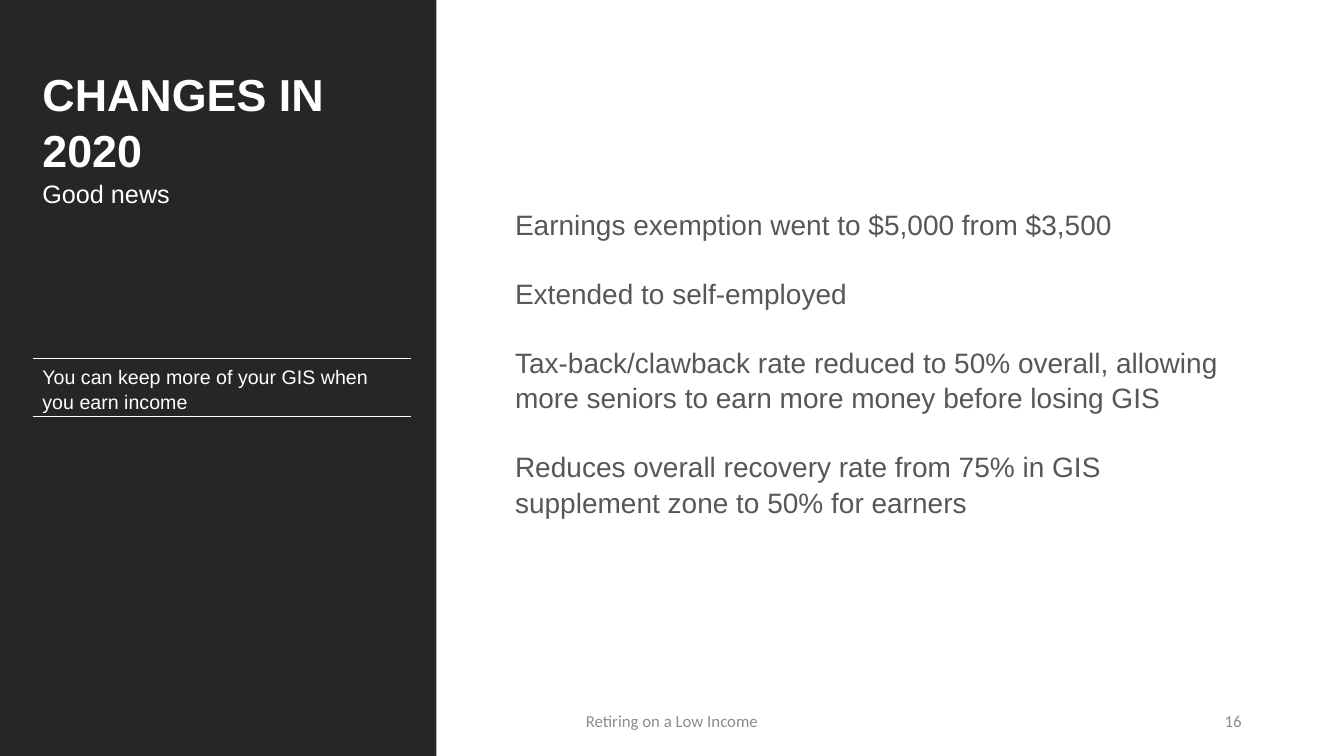
import pptx
import pptx.util
import pptx.dml.color
import pptx.enum.shapes
import pptx.enum.text
import pptx.oxml.ns
import lxml.etree

Cm, Pt = pptx.util.Cm, pptx.util.Pt
ALIGN, ANCHOR = pptx.enum.text.PP_ALIGN, pptx.enum.text.MSO_ANCHOR
COLORS = {"panel": "262626", "white": "FFFFFF", "body": "575757", "footer": "8C8C8C"}


def color(name):
    return pptx.dml.color.RGBColor.from_string(COLORS[name])


def add_text(box, paragraphs, tint, font="Arial", align=ALIGN.LEFT,
             anchor=ANCHOR.TOP, line_spacing=1.05, gap=0):
    """Add a text box; each paragraph is (text, size, bold)."""
    frame = slide.shapes.add_textbox(*(Cm(length) for length in box)).text_frame
    frame.word_wrap = True
    frame.vertical_anchor = anchor
    for index, (text, size, bold) in enumerate(paragraphs):
        paragraph = frame.add_paragraph() if index else frame.paragraphs[0]
        paragraph.text = text
        paragraph.alignment = align
        paragraph.line_spacing = line_spacing
        paragraph.space_before = Pt(gap if index else 0)
        run_font = paragraph.runs[0].font
        run_font.name, run_font.size, run_font.bold = font, Pt(size), bold
        run_font.color.rgb = color(tint)
    return frame


deck = pptx.Presentation()
deck.slide_width, deck.slide_height = Cm(33.87), Cm(19.05)
slide = deck.slides.add_slide(deck.slide_layouts[6])

# Dark side panel
panel = slide.shapes.add_shape(
    pptx.enum.shapes.MSO_SHAPE.RECTANGLE, 0, 0, Cm(11), deck.slide_height)
panel.shadow.inherit = False
panel.fill.solid()
panel.fill.fore_color.rgb = color("panel")
panel.line.fill.background()

# Footer and slide number
footer_top, footer_height = 17.65, 1.02
for left, width, text, align in (
    (11.22, 11.43, "Retiring on a Low Income", ALIGN.CENTER),
    (23.92, 7.62, "16", ALIGN.RIGHT),
):
    add_text((left, footer_top, width, footer_height), [(text, 12, False)], "footer",
             font="Calibri", align=align, anchor=ANCHOR.MIDDLE, line_spacing=1)

# Heading and key message on the panel
panel_left, panel_width = 0.82, 9.55
add_text((panel_left, 1.48, panel_width, 3.76),
         [("CHANGES IN 2020", 32, True), ("Good news", 18, False)], "white")
add_text((panel_left, 9.04, panel_width, 1.45),
         [("You can keep more of your GIS when you earn income", 14, False)], "white")

# Rules above and below the key message
for rule_top in (9.02, 10.49):
    rule = slide.shapes.add_connector(
        pptx.enum.shapes.MSO_CONNECTOR.STRAIGHT,
        Cm(panel_left), Cm(rule_top), Cm(panel_left + panel_width), Cm(rule_top))
    rule.line.color.rgb = color("white")
    rule.line.width = Pt(0.5)
    lxml.etree.SubElement(rule._element.spPr, pptx.oxml.ns.qn("a:effectLst"))

# List of changes
changes = [
    "Earnings exemption went to $5,000 from $3,500",
    "Extended to self-employed",
    "Tax-back/clawback rate reduced to 50% overall, allowing more seniors "
    "to earn more money before losing GIS",
    "Reduces overall recovery rate from 75% in GIS supplement zone to 50% for earners",
]
changes_frame = add_text((12.73, 1.96, 18.42, 14.35),
                         [(change, 20, False) for change in changes], "body",
                         anchor=ANCHOR.MIDDLE, gap=24)
changes_frame.margin_top = changes_frame.margin_bottom = Cm(0.25)

deck.save("out.pptx")
